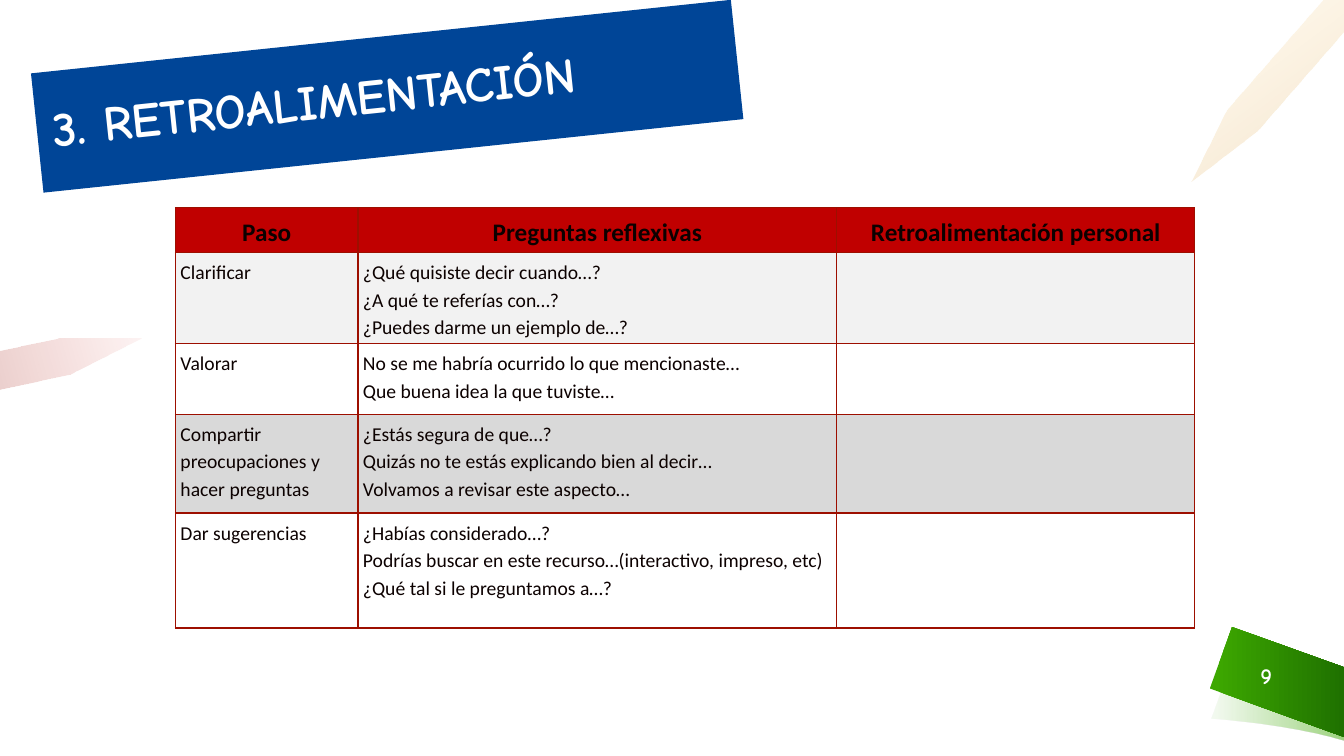
from lxml.etree import SubElement
from pptx import Presentation
from pptx.dml.color import RGBColor
from pptx.enum.shapes import MSO_SHAPE
from pptx.enum.text import MSO_ANCHOR, PP_ALIGN
from pptx.oxml.ns import qn
from pptx.util import Inches, Pt

GREEN, RED, WHITE = "3DA800", "9D0F00", "FFFFFF"
HEADS = ["Paso", "Preguntas reflexivas", "Retroalimentación personal"]
STEPS = [
    ("Clarificar", ["¿Qué quisiste decir cuando…?",
                    "¿A qué te referías con…?",
                    "¿Puedes darme un ejemplo de…?"], "F2F2F2"),
    ("Valorar", ["No se me habría ocurrido lo que mencionaste…",
                 "Que buena idea la que tuviste…"], WHITE),
    ("Compartir preocupaciones y hacer preguntas",
     ["¿Estás segura de que…?",
      "Quizás no te estás explicando bien al decir…",
      "Volvamos a revisar este aspecto…"], "D9D9D9"),
    ("Dar sugerencias", ["¿Habías considerado…?",
                         "Podrías buscar en este recurso…(interactivo, impreso, etc)",
                         "¿Qué tal si le preguntamos a…?"], WHITE),
]
COLS = [1.81, 4.75, 3.55]
ROWS = [0.36, 0.86, 0.7, 0.98, 1.14]


def paint(target, color):
    target.rgb = RGBColor.from_string(color)


def fill(item, color):
    item.fill.solid()
    paint(item.fill.fore_color, color)


def style(frame, size, face, color, bold, align, space):
    for para in frame.paragraphs:
        para.alignment = align
        para.line_spacing = space
        for run in para.runs:
            run.font.size = Pt(size)
            run.font.name = face
            run.font.bold = bold
            paint(run.font.color, color)


def inset(item, left, top, right, bottom):
    item.margin_left, item.margin_top = Inches(left), Inches(top)
    item.margin_right, item.margin_bottom = Inches(right), Inches(bottom)


def curve(a, b, c, d, count=12):
    for step in range(1, count + 1):
        t = step / count
        u = 1 - t
        yield tuple(u**3 * p + 3 * u * u * t * q + 3 * u * t * t * r + t**3 * s
                    for p, q, r, s in zip(a, b, c, d))


def blend(shape, stops, angle):
    shape.fill.gradient()
    shape.fill.gradient_angle = -angle % 360
    for stop, (place, color, alpha) in zip(shape.fill.gradient_stops, stops):
        paint(stop.color, color)
        stop.position = place
    marks = shape.fill._xPr.iter(qn("a:srgbClr"))
    for mark, (place, color, alpha) in zip(marks, stops):
        if alpha < 100:
            SubElement(mark, qn("a:alpha"), val=str(alpha * 1000))


def outline(slide, left, top, points, stops, angle):
    spots = [(Inches(left + x), Inches(top + y)) for x, y in points]
    build = slide.shapes.build_freeform(*spots[0])
    build.add_line_segments(spots[1:], close=True)
    shape = build.convert_to_shape()
    shape.shadow.inherit = False
    shape.line.fill.background()
    blend(shape, stops, angle)


def pencils(slide):
    outline(slide, 0, 3.36,
            [(1.4, 0), (0.58, 0), (0, 0.12), (0, 0.5), (0.7, 0.35)],
            [(0, "D30F00", 5), (1, RED, 20)], 164)
    outline(slide, 11.82, 0,
            [(1.3, 0), (0.35, 1.09), (0, 1.8), (0.65, 1.3), (1.51, 0.31), (1.51, 0)],
            [(0, "FFAA00", 5), (1, "C07400", 20)], 53)


def badge(slide, left, top, number):
    low, edge = (0.02, 0.91), (1.33, 0.46)
    shade = [low, *curve(low, low, (0.78, 0.96), (1.33, 1.13)),
             edge, *curve(edge, (0.72, 0.29), (0.24, 0.3), (0.24, 0.3))]
    outline(slide, left, top, shade, [(0.03, GREEN, 6), (1, GREEN, 50)], 0)
    outline(slide, left, top, [(1.33, 0.4), (0.22, 0), (0, 0.61), (1.33, 1.09)],
            [(0.03, GREEN, 100), (1, "1F7100", 100)], 0)
    box = slide.shapes.add_textbox(Inches(left + 0.21), Inches(top + 0.28),
                                   Inches(0.7), Inches(0.4))
    frame = box.text_frame
    frame.word_wrap = True
    frame.vertical_anchor = MSO_ANCHOR.MIDDLE
    frame.text = number
    style(frame, 16, "Comic Neue", WHITE, True, PP_ALIGN.CENTER, 1.0)


def border(cell):
    props = cell._tc.get_or_add_tcPr()
    for place, side in enumerate(("lnL", "lnR", "lnT", "lnB")):
        line = props.makeelement(qn(f"a:{side}"), {"w": str(Pt(1))})
        solid = SubElement(line, qn("a:solidFill"))
        SubElement(solid, qn("a:srgbClr"), val=RED)
        props.insert(place, line)


def grid(slide, left, top, width, height):
    table = slide.shapes.add_table(len(ROWS), len(COLS), Inches(left), Inches(top),
                                   Inches(width), Inches(height)).table
    for column, size in zip(table.columns, COLS):
        column.width = Inches(size)
    for row, size in zip(table.rows, ROWS):
        row.height = Inches(size)
    lines = [(HEADS, "C00000")]
    lines += [([step, "\n".join(asks), ""], color) for step, asks, color in STEPS]
    for row, (texts, color) in enumerate(lines):
        head = row == 0
        for col, text in enumerate(texts):
            cell = table.cell(row, col)
            cell.text_frame.text = text
            inset(cell, 0.05, 0.05, 0.05, 0.05)
            fill(cell, color)
            border(cell)
            style(cell.text_frame, 18 if head else 14, "Calibri", "0C0100", head,
                  PP_ALIGN.CENTER if head else PP_ALIGN.LEFT, 1.15)


def title(slide, left, top, width, height, text):
    shape = slide.shapes.add_shape(MSO_SHAPE.RECTANGLE, Inches(left), Inches(top),
                                   Inches(width), Inches(height))
    shape.rotation = 354
    shape.shadow.inherit = False
    shape.line.fill.background()
    fill(shape, "004597")
    frame = shape.text_frame
    frame.word_wrap = True
    frame.vertical_anchor = MSO_ANCHOR.MIDDLE
    inset(frame, 0.16, 0.05, 0.1, 0.05)
    frame.text = text
    style(frame, 35.1, "Comic Neue", WHITE, True, PP_ALIGN.LEFT, 0.9)


def main():
    deck = Presentation()
    deck.slide_width, deck.slide_height = Inches(13.33), Inches(7.5)
    slide = deck.slides.add_slide(deck.slide_layouts[6])
    pencils(slide)
    badge(slide, 12, 6.22, "9")
    grid(slide, 1.74, 2.06, sum(COLS), sum(ROWS))
    title(slide, 0.35, 0.36, 6.98, 1.19, "3. RETROALIMENTACIÓN")
    deck.save("out.pptx")


if __name__ == "__main__":
    main()
